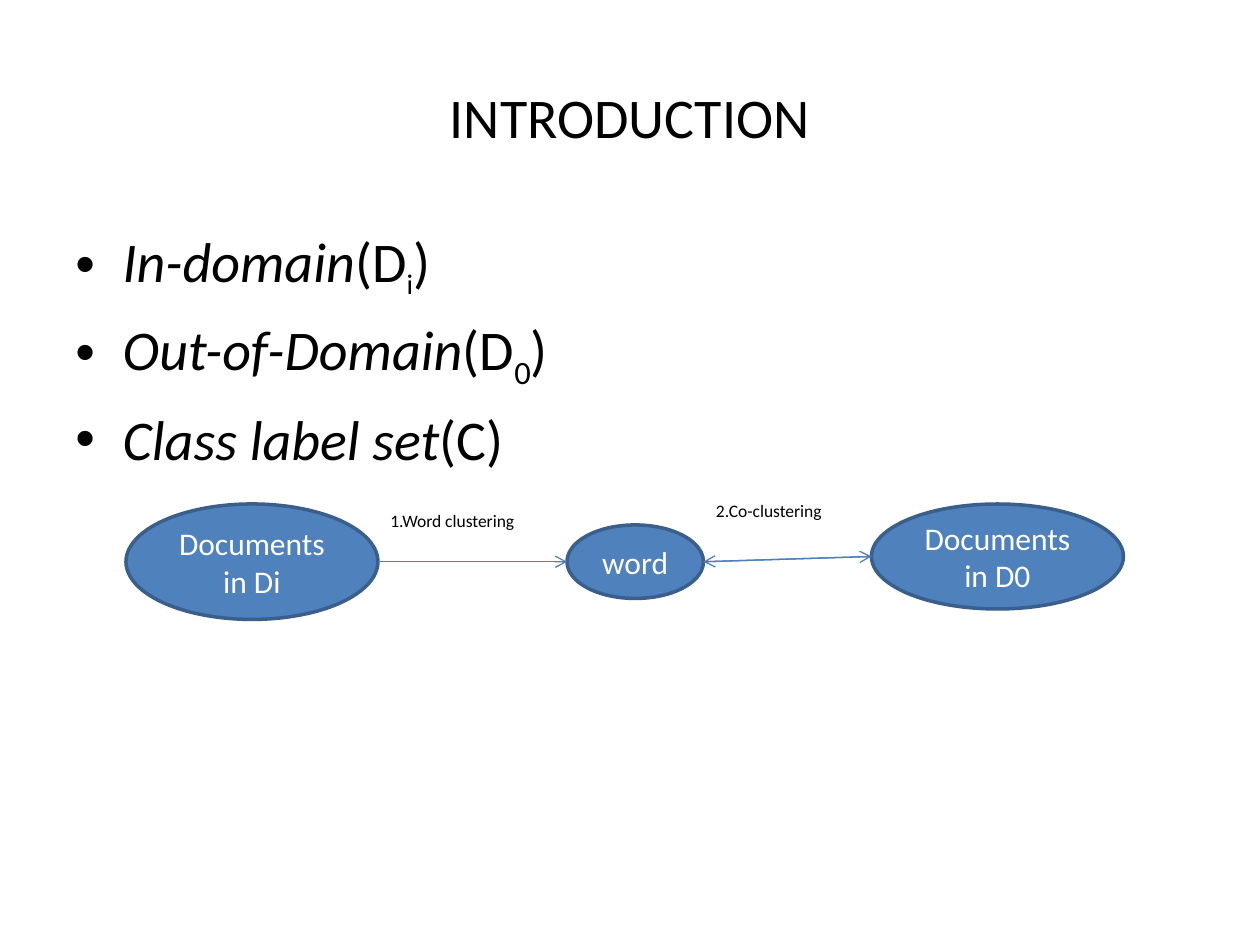
from dataclasses import dataclass

from lxml import etree
from pptx import Presentation
from pptx.dml.color import RGBColor
from pptx.enum import shapes, text
from pptx.oxml import ns
from pptx.util import Pt


@dataclass(frozen=True)
class Theme:
    font: str = "Calibri"
    ink: RGBColor = RGBColor(0, 0, 0)
    node_ink: RGBColor = RGBColor(255, 255, 255)
    node_fill: RGBColor = RGBColor.from_string("4F81BD")
    node_edge: RGBColor = RGBColor.from_string("3A5F8C")
    arrow: RGBColor = RGBColor.from_string("4B7EBC")
    heading_size: int = 32
    subscript_size: int = 28
    node_size: int = 18
    label_size: int = 10


THEME = Theme()
LEFT_SIDE, RIGHT_SIDE = 1, 3  # sides of a node, counted from the top


def style(run, size, color=THEME.ink):
    run.font.name = THEME.font
    run.font.size = Pt(size)
    run.font.color.rgb = color


def add_text(slide, box, words, size, align=text.PP_ALIGN.LEFT,
             anchor=text.MSO_ANCHOR.TOP):
    frame = slide.shapes.add_textbox(*map(Pt, box)).text_frame
    frame.word_wrap = True
    frame.vertical_anchor = anchor
    paragraph = frame.paragraphs[0]
    paragraph.text = words
    paragraph.alignment = align
    style(paragraph.runs[0], size)


def add_bullet(paragraph, indent):
    properties = paragraph._p.get_or_add_pPr()
    properties.set("marL", str(Pt(indent)))
    properties.set("indent", str(-Pt(indent)))
    etree.SubElement(properties, ns.qn("a:buFont")).set("typeface", "Arial")
    etree.SubElement(properties, ns.qn("a:buChar")).set("char", "•")


def add_definitions(slide, box, definitions):
    """Bulleted terms in italics, each with its symbol and subscript."""
    frame = slide.shapes.add_textbox(*map(Pt, box)).text_frame
    frame.word_wrap = True
    for number, (term, symbol, subscript, size) in enumerate(definitions):
        paragraph = frame.add_paragraph() if number else frame.paragraphs[0]
        paragraph.space_before = Pt(7.8)
        add_bullet(paragraph, 27)
        parts = [(term, THEME.heading_size)]
        if subscript:
            parts += [("(" + symbol, THEME.heading_size), (subscript, size),
                      (")", THEME.heading_size)]
        else:
            parts.append((f"({symbol})", THEME.heading_size))
        for words, part_size in parts:
            run = paragraph.add_run()
            run.text = words
            style(run, part_size)
            run.font.italic = words == term
            if words == subscript:
                run.font._element.set("baseline", "-25000")


def add_node(slide, box, words):
    node = slide.shapes.add_shape(shapes.MSO_SHAPE.OVAL, *map(Pt, box))
    node.shadow.inherit = False
    node.fill.solid()
    node.fill.fore_color.rgb = THEME.node_fill
    node.line.color.rgb = THEME.node_edge
    node.line.width = Pt(2)
    frame = node.text_frame
    frame.word_wrap = True
    frame.vertical_anchor = text.MSO_ANCHOR.MIDDLE
    paragraph = frame.paragraphs[0]
    paragraph.text = words
    paragraph.alignment = text.PP_ALIGN.CENTER
    style(paragraph.runs[0], THEME.node_size, THEME.node_ink)
    return node


def add_arrow(slide, source, source_side, target, target_side):
    arrow = slide.shapes.add_connector(shapes.MSO_CONNECTOR.STRAIGHT, 0, 0, 0, 0)
    arrow.begin_connect(source, source_side)
    arrow.end_connect(target, target_side)
    # An ellipse has eight connection sites, two for each side.
    for glue in arrow._element.iter(ns.qn("a:stCxn"), ns.qn("a:endCxn")):
        glue.set("idx", str(2 * int(glue.get("idx"))))
    arrow.line.color.rgb = THEME.arrow
    arrow.line.width = Pt(0.75)
    etree.SubElement(arrow.line._get_or_add_ln(), ns.qn("a:tailEnd")).set("type", "arrow")
    etree.SubElement(arrow._element.spPr, ns.qn("a:effectLst"))


def add_clustering_flow(slide, box):
    left, top, width, height = box
    in_domain = add_node(slide, (left, top + 6, 144, height - 6), "Documents in Di")
    word = add_node(slide, (left + 252, top + 18, 78, 42), "word")
    out_domain = add_node(slide, (left + width - 144, top + 6, 144, 60),
                          "Documents in D0")
    add_arrow(slide, in_domain, RIGHT_SIDE, word, LEFT_SIDE)
    add_arrow(slide, out_domain, LEFT_SIDE, word, RIGHT_SIDE)
    add_arrow(slide, word, RIGHT_SIDE, out_domain, LEFT_SIDE)
    add_text(slide, (left + 144, top + 6, 108, 19.4), "1.Word clustering",
             THEME.label_size)
    add_text(slide, (left + 330, top, 90, 19.4), "2.Co-clustering",
             THEME.label_size)


def main():
    deck = Presentation()
    deck.slide_width, deck.slide_height = Pt(720), Pt(540)
    slide = deck.slides.add_slide(deck.slide_layouts[6])
    add_text(slide, (36, 21.6, 648, 90), "INTRODUCTION", THEME.heading_size,
             text.PP_ALIGN.CENTER, text.MSO_ANCHOR.MIDDLE)
    add_definitions(slide, (36, 126, 648, 356.4), [
        ("In-domain", "D", "i", THEME.subscript_size),
        ("Out-of-Domain", "D", "0", THEME.heading_size),
        ("Class label set", "C", "", THEME.heading_size),
    ])
    add_clustering_flow(slide, (72, 282, 570, 72))
    deck.save("out.pptx")


if __name__ == "__main__":
    main()
